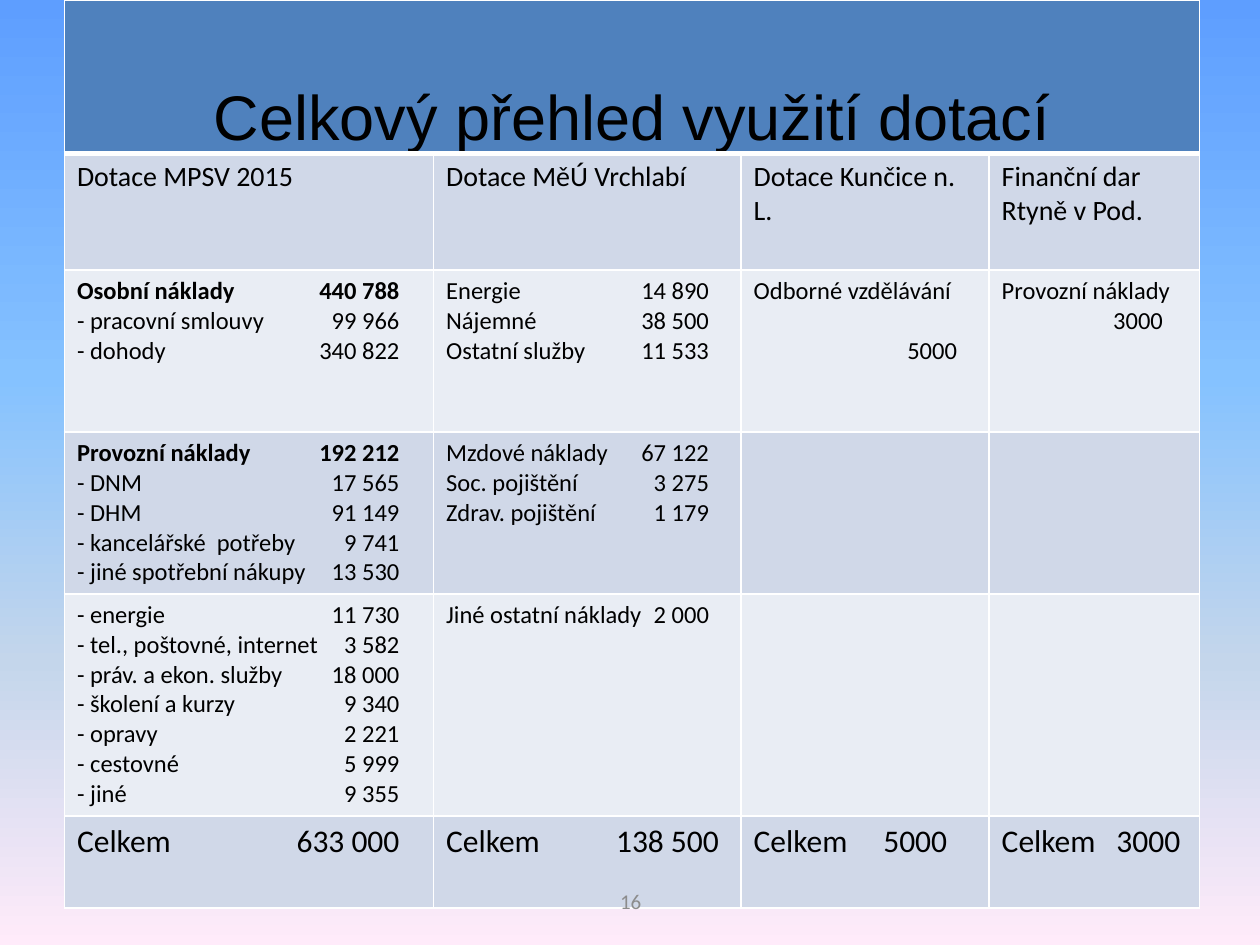
"""Build the slide with the overview of how the grants were used."""
import copy

import lxml.etree
import pptx
import pptx.dml.color
import pptx.enum.text
import pptx.oxml.ns
import pptx.util

Cm = pptx.util.Cm
Pt = pptx.util.Pt
qn = pptx.oxml.ns.qn
PP_ALIGN = pptx.enum.text.PP_ALIGN
MSO_ANCHOR = pptx.enum.text.MSO_ANCHOR

COLORS = {
    "title": "4F81BD",
    "dark": "D0D8E8",
    "light": "E9EDF4",
    "text": "000000",
    "number": "8C8C8C",
    "border": "FFFFFF",
}
SKY = [(0, "5E9EFF"), (0.4, "85C2FF"), (0.7, "C4D6EB"), (1, "FFEBFA")]

COLUMN_WIDTHS = [7.44, 6.2, 5, 4.24]
ROW_HEIGHTS = [3.1, 2.34, 3.27, 3.25, 4.48, 1.85]
AMOUNT_TABS = [6.5, 5.3, 4.1, 3.25]
TOTAL_TABS = [6.5, 5.5, 3.9, 3.6]

TITLE = "Celkový přehled využití dotací"
GRANTS = ["Dotace MPSV 2015", "Dotace MěÚ Vrchlabí", "Dotace Kunčice n. L.", "Finanční dar Rtyně v Pod."]
COSTS = [
    [
        ["Osobní náklady\t440 788", "- pracovní smlouvy\t99 966", "- dohody\t340 822"],
        ["Energie\t14 890", "Nájemné\t38 500", "Ostatní služby\t11 533"],
        ["Odborné vzdělávání", "\t5000"],
        ["Provozní náklady", "\t3000"],
    ],
    [
        ["Provozní náklady\t192 212", "- DNM\t17 565", "- DHM\t91 149",
         "- kancelářské  potřeby\t9 741", "- jiné spotřební nákupy\t13 530"],
        ["Mzdové náklady\t67 122", "Soc. pojištění\t3 275", "Zdrav. pojištění\t1 179"],
    ],
    [
        ["- energie\t11 730", "- tel., poštovné, internet\t3 582", "- práv. a ekon. služby\t18 000",
         "- školení a kurzy\t9 340", "- opravy\t2 221", "- cestovné\t5 999", "- jiné\t9 355"],
        ["Jiné ostatní náklady\t2 000"],
    ],
]
TOTALS = ["Celkem\t633 000", "Celkem\t138 500", "Celkem\t5000", "Celkem\t3000"]


class GrantSlide:
    """Hold the style and the current slide."""

    def __init__(self, presentation):
        self.font = "Calibri"
        self.slide = presentation.slides.add_slide(presentation.slide_layouts[6])

    def color(self, name):
        return pptx.dml.color.RGBColor.from_string(COLORS[name])

    def background(self, stops):
        fill = self.slide.background.fill
        fill.gradient()
        fill.gradient_angle = 270
        stop_list = self.slide.element.find(".//" + qn("a:gsLst"))
        while len(stop_list) < len(stops):
            stop_list.append(copy.deepcopy(stop_list[0]))
        for stop, (position, shade) in zip(fill.gradient_stops, stops):
            stop.position = position
            stop.color.rgb = pptx.dml.color.RGBColor.from_string(shade)

    def table(self, left, top, widths, heights):
        frame = self.slide.shapes.add_table(
            len(heights), len(widths), Cm(left), Cm(top), Cm(sum(widths)), Cm(sum(heights)))
        grid = frame.table
        for column, width in zip(grid.columns, widths):
            column.width = Cm(width)
        for row, height in zip(grid.rows, heights):
            row.height = Cm(height)
        return grid

    def lines(self, text_frame, lines, size, color="text", font=None, align=PP_ALIGN.LEFT, tab=None):
        text_frame.text = "\n".join(lines)
        for paragraph in text_frame.paragraphs:
            paragraph.alignment = align
            paragraph.font.size = Pt(size)
            for run in paragraph.runs:
                run.font.size = Pt(size)
                run.font.name = font or self.font
                run.font.color.rgb = self.color(color)
            if tab and "\t" in paragraph.text:
                properties = paragraph._p.get_or_add_pPr()
                tabs = lxml.etree.Element(qn("a:tabLst"))
                lxml.etree.SubElement(tabs, qn("a:tab"), pos=str(Cm(tab)), algn="r")
                properties.insert(0, tabs)

    def cell(self, cell, lines, fill, size, top=1, bottom=1, **text_style):
        cell.fill.solid()
        cell.fill.fore_color.rgb = self.color(fill)
        weights = {"lnL": 1, "lnR": 1, "lnT": top, "lnB": bottom}
        for place, (side, weight) in enumerate(weights.items()):
            line = lxml.etree.Element(qn("a:" + side), w=str(Pt(weight)))
            solid = lxml.etree.SubElement(line, qn("a:solidFill"))
            lxml.etree.SubElement(solid, qn("a:srgbClr"), val=COLORS["border"])
            cell._tc.get_or_add_tcPr().insert(place, line)
        self.lines(cell.text_frame, lines, size, **text_style)

    def text(self, left, top, width, height, line, **text_style):
        box = self.slide.shapes.add_textbox(Cm(left), Cm(top), Cm(width), Cm(height))
        box.text_frame.word_wrap = True
        box.text_frame.vertical_anchor = MSO_ANCHOR.MIDDLE
        self.lines(box.text_frame, [line], **text_style)


def main():
    presentation = pptx.Presentation()
    presentation.slide_width = Cm(25.4)
    presentation.slide_height = Cm(19.05)
    page = GrantSlide(presentation)
    page.background(SKY)

    overview = page.table(1.3, 0, COLUMN_WIDTHS, ROW_HEIGHTS)
    title = overview.cell(0, 0)
    title.merge(overview.cell(0, 3))
    title.vertical_anchor = MSO_ANCHOR.BOTTOM
    title.margin_left = title.margin_right = title.margin_top = Cm(0.03)
    title.margin_bottom = 0
    page.cell(title, [TITLE], "title", 36, bottom=3, font="Arial", align=PP_ALIGN.CENTER)

    for column, (grant, total) in enumerate(zip(GRANTS, TOTALS)):
        page.cell(overview.cell(1, column), [grant], "dark", 16, top=3)
        for row, costs in enumerate(COSTS, start=2):
            lines = costs[column] if column < len(costs) else []
            fill = "dark" if row % 2 else "light"
            page.cell(overview.cell(row, column), lines, fill, 14, tab=AMOUNT_TABS[column])
        page.cell(overview.cell(5, column), [total], "dark", 18, tab=TOTAL_TABS[column])

    for row in (2, 3):
        for run in overview.cell(row, 0).text_frame.paragraphs[0].runs:
            run.font.bold = True
    overview.cell(2, 2).text_frame.paragraphs[1].space_before = Pt(17)

    page.text(8.69, 17.65, 8.05, 1.02, "16", size=12, color="number", align=PP_ALIGN.CENTER)
    presentation.save("out.pptx")


if __name__ == "__main__":
    main()
